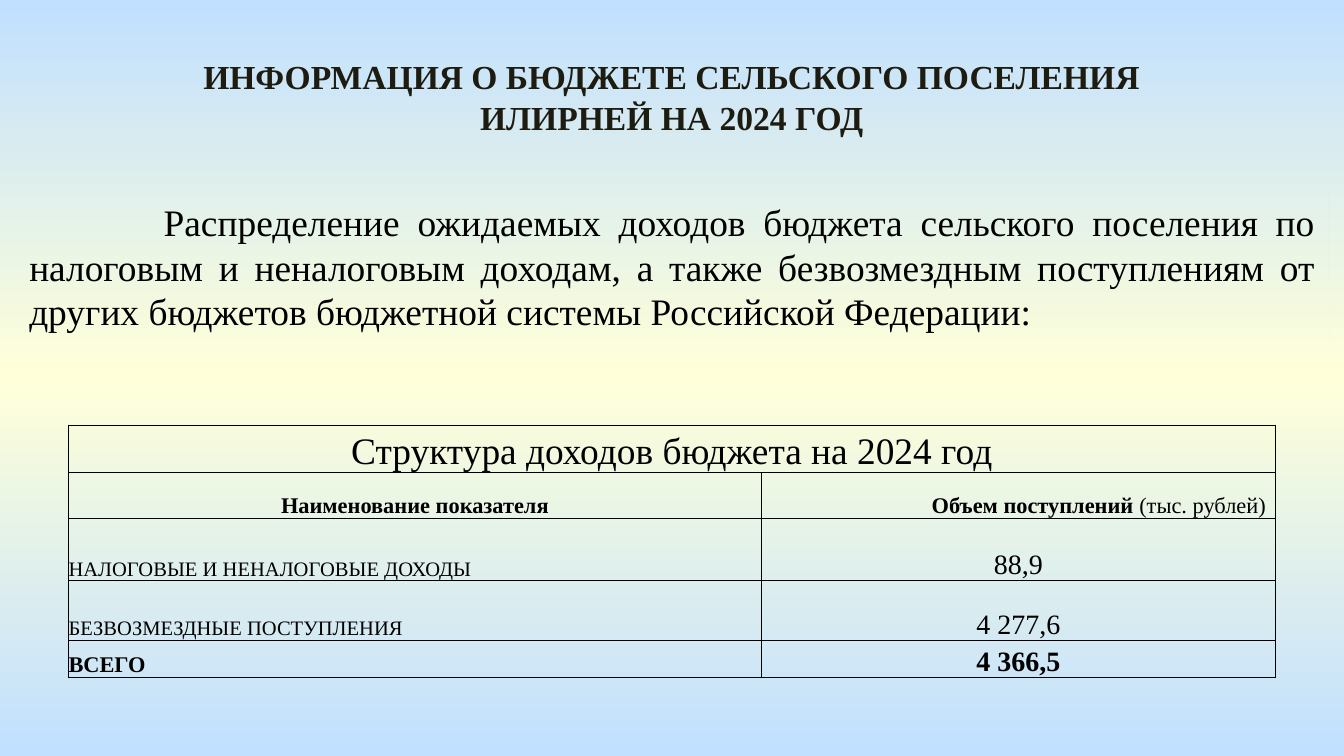
from copy import deepcopy

from lxml import etree
from pptx import Presentation
from pptx.dml.color import RGBColor
from pptx.enum.shapes import MSO_SHAPE
from pptx.enum.text import MSO_ANCHOR, PP_ALIGN
from pptx.oxml.ns import qn
from pptx.util import Pt

LEFT, CENTER, RIGHT, JUSTIFY = PP_ALIGN.LEFT, PP_ALIGN.CENTER, PP_ALIGN.RIGHT, PP_ALIGN.JUSTIFY
TOP, BOTTOM = MSO_ANCHOR.TOP, MSO_ANCHOR.BOTTOM
RECTANGLE = MSO_SHAPE.RECTANGLE
FONT = "Times New Roman"
COLORS = {"sky": "C1E0FF", "cream": "FFFFD9", "title": "1E1C11", "text": "000000"}


def style_run(span, size, bold=False, color="text"):
    span.font.name = FONT
    span.font.size = Pt(size)
    span.font.bold = bold
    span.font.color.rgb = RGBColor.from_string(COLORS[color])


def add_border(cell):
    properties = cell._tc.get_or_add_tcPr()
    for side in ("a:lnL", "a:lnR", "a:lnT", "a:lnB"):
        line = etree.SubElement(properties, qn(side), w=str(Pt(0.5)))
        fill = etree.SubElement(line, qn("a:solidFill"))
        etree.SubElement(fill, qn("a:srgbClr"), val=COLORS["text"])


deck = Presentation()
deck.slide_width, deck.slide_height = Pt(720), Pt(405)
page = deck.slides.add_slide(deck.slide_layouts[6])

# Background gradient: sky, cream, sky from top to bottom
backdrop = page.background.fill
backdrop.gradient()
backdrop.gradient_angle = 270
stop_list = page.element.find(".//" + qn("a:gsLst"))
stop_list.insert(1, deepcopy(stop_list[0]))
for stop, position, color in zip(backdrop.gradient_stops, (0, 0.5, 1), ("sky", "cream", "sky")):
    stop.position = position
    stop.color.rgb = RGBColor.from_string(COLORS[color])

# Introduction, on a rectangle that shows the slide background
intro = page.shapes.add_shape(RECTANGLE, Pt(8.6), Pt(103), Pt(703.2), Pt(80))
intro.shadow.inherit = False
intro.line.fill.background()
intro._element.set("useBgFill", "1")
intro._element.remove(intro._element.find(qn("p:style")))
intro.text_frame.vertical_anchor = TOP
intro.text_frame.text = (
    "Распределение ожидаемых доходов бюджета сельского поселения по налоговым и неналоговым "
    "доходам, а также безвозмездным поступлениям от других бюджетов бюджетной системы "
    "Российской Федерации:")
para = intro.text_frame.paragraphs[0]
para.alignment = JUSTIFY
para._p.get_or_add_pPr().set("indent", str(Pt(72)))
style_run(para.runs[0], 20)

# Title
title = page.shapes.add_textbox(Pt(81.6), Pt(26.6), Pt(556.6), Pt(51))
title.text_frame.word_wrap = True
title.text_frame.text = "ИНФОРМАЦИЯ О БЮДЖЕТЕ СЕЛЬСКОГО ПОСЕЛЕНИЯ ИЛИРНЕЙ НА 2024 ГОД"
para = title.text_frame.paragraphs[0]
para.alignment = CENTER
style_run(para.runs[0], 18, True, "title")

# Revenue table: each cell is text, size, bold, alignment
rows = [
    (25.4, [("Структура доходов бюджета на 2024 год", 20, False, CENTER), ("", 20, False, CENTER)]),
    (24.6, [("Наименование показателя", 12, True, CENTER),
            ("Объем поступлений ", 12, True, RIGHT)]),
    (33.4, [("НАЛОГОВЫЕ И НЕНАЛОГОВЫЕ ДОХОДЫ", 11, False, LEFT), ("88,9", 15, False, CENTER)]),
    (32, [("БЕЗВОЗМЕЗДНЫЕ ПОСТУПЛЕНИЯ", 11, False, LEFT), ("4 277,6", 15, False, CENTER)]),
    (20, [("ВСЕГО", 12, True, LEFT), ("4 366,5", 15, True, CENTER)]),
]
table = page.shapes.add_table(len(rows), 2, Pt(36.7), Pt(227.7), Pt(646.5), Pt(135.4)).table
table.first_row = table.horz_banding = False
for column, width in zip(table.columns, (371.3, 275.2)):
    column.width = Pt(width)

for row_index, (height, cells) in enumerate(rows):
    table.rows[row_index].height = Pt(height)
    for column_index, (text, size, bold, align) in enumerate(cells):
        cell = table.cell(row_index, column_index)
        add_border(cell)
        cell.fill.background()
        cell.vertical_anchor = BOTTOM
        cell.margin_top = cell.margin_bottom = 0
        cell.margin_left = cell.margin_right = Pt(5 if align == RIGHT else 0)
        para = cell.text_frame.paragraphs[0]
        para.alignment = align
        if text:
            para.text = text
            style_run(para.runs[0], size, bold)
table.cell(0, 0).merge(table.cell(0, 1))

# Unit of measure after the column heading
unit = table.cell(1, 1).text_frame.paragraphs[0].add_run()
unit.text = "(тыс. рублей)"
style_run(unit, 12)

deck.save("out.pptx")
